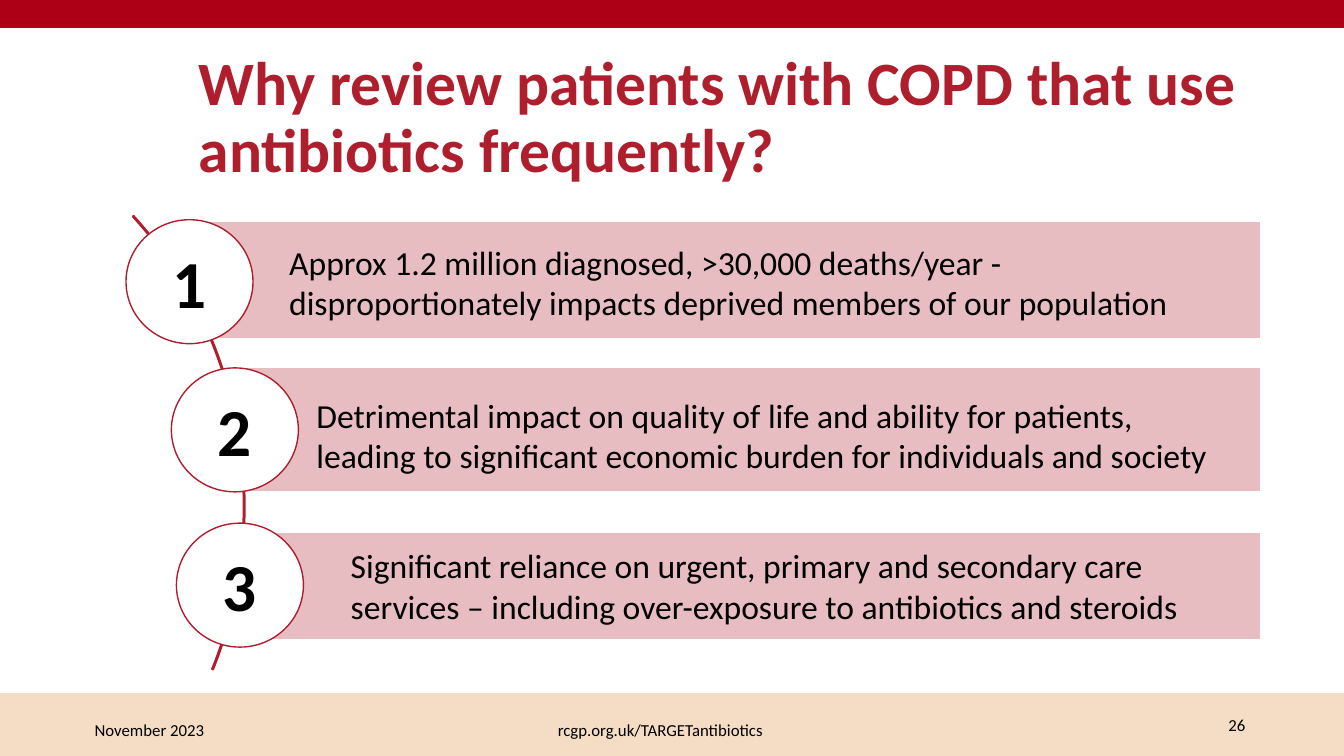
"""Build the slide on why to review patients with COPD who use antibiotics often."""
import pptx
import pptx.dml.color
import pptx.enum.shapes
import pptx.enum.text
import pptx.oxml
import pptx.oxml.ns
import pptx.util

RGB = pptx.dml.color.RGBColor
SHAPE = pptx.enum.shapes.MSO_SHAPE
ALIGN = pptx.enum.text.PP_ALIGN
ANCHOR = pptx.enum.text.MSO_ANCHOR
In = pptx.util.Inches

RED = RGB(0xAF, 0x1E, 0x2C)
BAND_RED = RGB(0xAD, 0x00, 0x16)
SAND = RGB(0xF4, 0xDD, 0xC4)
WHITE = RGB(0xFF, 0xFF, 0xFF)
BLACK = RGB(0x00, 0x00, 0x00)

TITLE = "Why review patients with COPD that use antibiotics frequently?"
REASONS = [
    {"text": "Approx 1.2 million diagnosed, >30,000 deaths/year - disproportionately "
             "impacts deprived members of our population",
     "bar": (2.07, 2.2, 1.16), "circle": (1.25, 2.18), "label": (2.77, 2.35, 9.36)},
    {"text": "Detrimental impact on quality of life and ability for patients, leading to "
             "significant economic burden for individuals and society",
     "bar": (2.41, 3.64, 1.24), "circle": (1.7, 3.65), "label": (3.04, 3.87, 9.26)},
    {"text": "Significant reliance on urgent, primary and secondary care services – "
             "including over-exposure to antibiotics and steroids",
     "bar": (2.58, 5.28, 1.07), "circle": (1.75, 5.19), "label": (3.38, 5.36, 9.15)},
]
FOOTERS = [
    ("November 2023", 0.84, 3, ALIGN.LEFT, ANCHOR.MIDDLE),
    ("rcgp.org.uk/TARGETantibiotics", 4.3, 4.5, ALIGN.CENTER, ANCHOR.MIDDLE),
    ("26", 9.5, 2.95, ALIGN.RIGHT, ANCHOR.TOP),
]
WIDTH, HEIGHT = 13.33, 7.5
BAR_RIGHT = 12.5
CIRCLE = (1.26, 1.23)
ARC = (-5.54, 0.85, 7.97, 8.34)
ARC_ADJUSTMENTS = (189, 14.324, 0.002)


def write(sp, text, size=24, color=BLACK, bold=False, align=ALIGN.LEFT,
          anchor=ANCHOR.TOP, spacing=None):
    """Put one formatted paragraph in a shape."""
    tf = sp.text_frame
    tf.word_wrap = True
    tf.auto_size = pptx.enum.text.MSO_AUTO_SIZE.NONE
    tf.vertical_anchor = anchor
    p = tf.paragraphs[0]
    p.alignment = align
    p.line_spacing = spacing
    r = p.add_run()
    r.text = text
    r.font.name = "Calibri"
    r.font.size = pptx.util.Pt(size)
    r.font.bold = bold
    r.font.color.rgb = color


def draw(s, kind, box, fill, line, alpha=None):
    """Add a flat preset shape with a one-point outline."""
    sp = s.shapes.add_shape(kind, *map(In, box))
    sp.shadow.inherit = False
    sp.fill.solid()
    sp.fill.fore_color.rgb = fill
    sp.line.color.rgb = line
    sp.line.width = pptx.util.Pt(1)
    if alpha:
        clr = sp.fill._xPr.find(".//" + pptx.oxml.ns.qn("a:srgbClr"))
        clr.append(pptx.oxml.parse_xml(
            f'<a:alpha {pptx.oxml.ns.nsdecls("a")} val="{alpha * 1000}"/>'))
    return sp


def main():
    """Lay out the slide and save it."""
    prs = pptx.Presentation()
    prs.slide_width, prs.slide_height = In(WIDTH), In(HEIGHT)
    s = prs.slides.add_slide(prs.slide_layouts.get_by_name("Title Only"))

    title = s.shapes.title
    title.left, title.top, title.width, title.height = map(In, (1.87, 0.39, 10.91, 1.5))
    write(title, TITLE, size=44, color=RED, bold=True, anchor=ANCHOR.BOTTOM, spacing=0.9)

    for top, height, color in ((6.88, 0.62, SAND), (0, 0.27, BAND_RED)):
        draw(s, SHAPE.RECTANGLE, (0, top, WIDTH, height), color, color)

    for reason in REASONS:
        left, top, height = reason["bar"]
        draw(s, SHAPE.RECTANGLE, (left, top, BAR_RIGHT - left, height), RED, WHITE, alpha=29)

    arc = draw(s, SHAPE.BLOCK_ARC, ARC, RED, RED)
    for i, value in enumerate(ARC_ADJUSTMENTS):
        arc.adjustments[i] = value

    for number, reason in enumerate(REASONS, 1):
        circle = draw(s, SHAPE.OVAL, reason["circle"] + CIRCLE, WHITE, RED)
        write(circle, str(number), size=48, bold=True, align=ALIGN.CENTER,
              anchor=ANCHOR.MIDDLE)
        label = s.shapes.add_textbox(*map(In, reason["label"] + (0.99,)))
        write(label, reason["text"])

    for text, left, width, align, anchor in FOOTERS:
        footer = s.shapes.add_textbox(*map(In, (left, 7.04, width, 0.4)))
        write(footer, text, size=12, align=align, anchor=anchor)

    prs.save("out.pptx")


if __name__ == "__main__":
    main()
